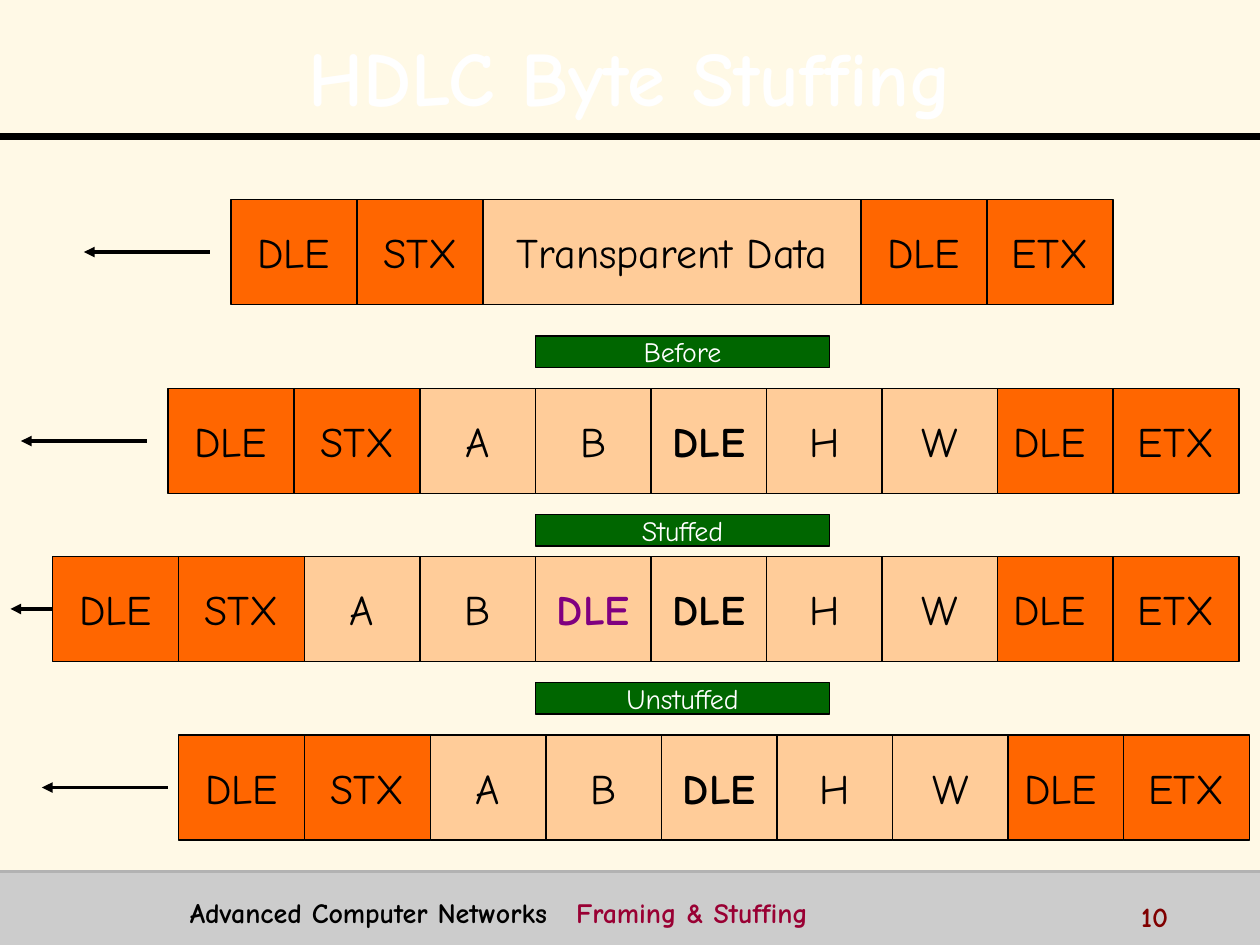
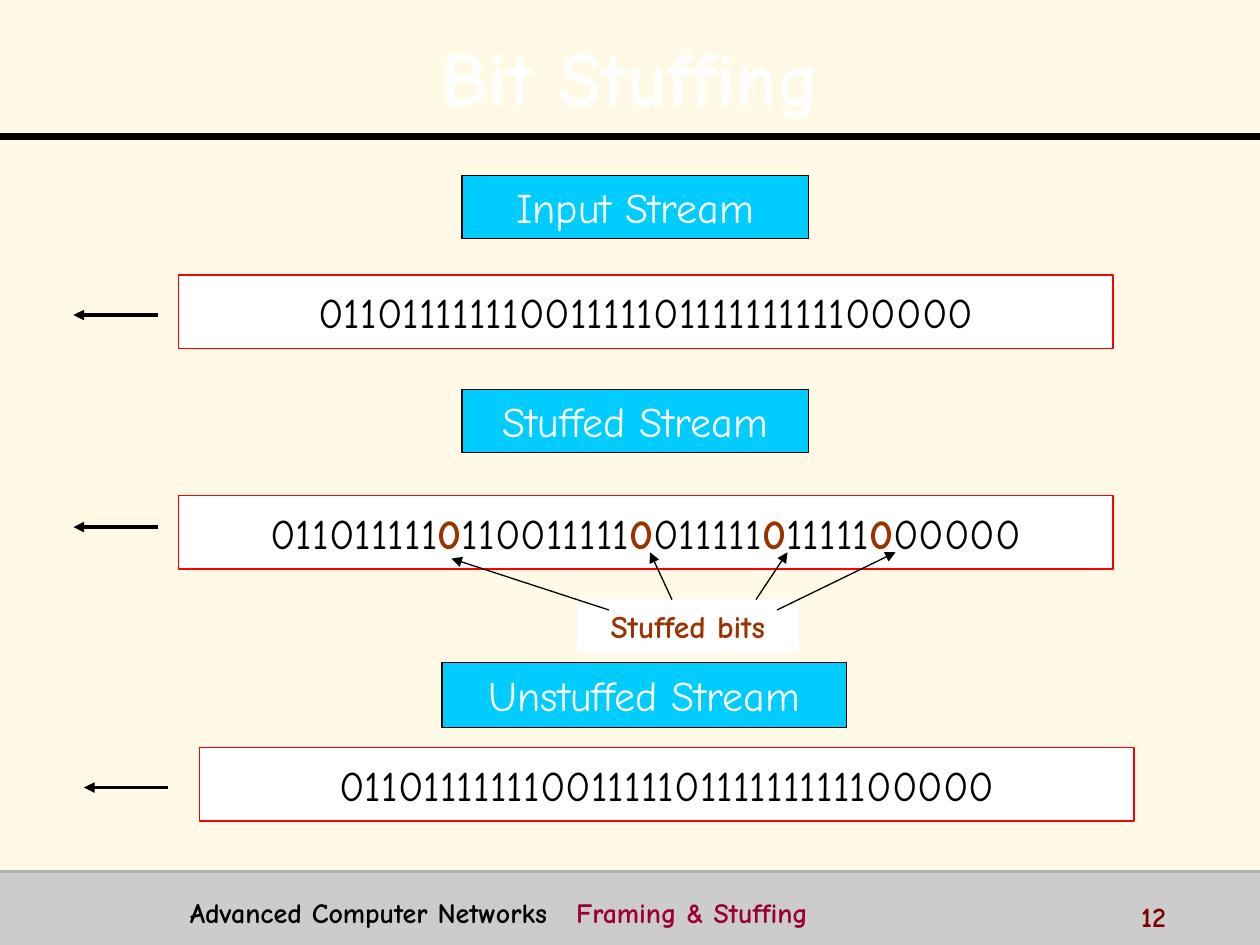
from pptx import Presentation
from pptx.dml.color import RGBColor
from pptx.enum.shapes import MSO_CONNECTOR as LINE, MSO_SHAPE as SHAPE
from pptx.enum.text import MSO_ANCHOR as ANCHOR, PP_ALIGN as ALIGN
from pptx.oxml.ns import qn
from pptx.util import Emu, Pt
from lxml.etree import SubElement

PX = 7620  # 120 px to the inch
PAGE_W, PAGE_H = 1200, 900
FONT = "Comic Neue"
COLORS = {
    "page": "FFF9E6", "black": "000000", "white": "FFFFFF",
    "band": "CCCCCC", "band_edge": "B2B2B2", "topic": "990033", "number": "800000",
    "control": "FF6600", "data": "FFCC99", "stage": "006600", "escape": "800080",
    "heading": "00CCFF", "stream_edge": "FF0000", "stuffed": "993300",
}

# Frame rows
CELL_H, CONTROL_W, CHAR_W = 100, 120, 110
STUFFED_BITS = "011011111|0|110011111|0|011111|0|11111|0|00000".split("|")


def px(length):
    return Emu(length * PX)


def color(name):
    return RGBColor.from_string(COLORS[name])


def add_span(para, text, size, ink="black", bold=False):
    span = para.add_run()
    span.text = text
    values = {"name": FONT, "size": Pt(size), "bold": bold}
    for key, value in values.items():
        setattr(span.font, key, value)
    span.font.color.rgb = color(ink)
    return span


def add_text(page, box):
    """Add a wrapping text box and return its text frame."""
    frame = page.shapes.add_textbox(*map(px, box)).text_frame
    frame.word_wrap = True
    return frame


def add_rect(page, box, fill, edge="black", spans=(), size=24):
    """Add a rectangle; spans holds (text, ink, bold) for its centred line."""
    rect = page.shapes.add_shape(SHAPE.RECTANGLE, *map(px, box))
    rect.shadow.inherit = False
    rect.fill.solid()
    rect.fill.fore_color.rgb = color(fill)
    if edge:
        rect.line.color.rgb = color(edge)
        rect.line.width = Pt(0.75)
    else:
        rect.line.fill.background()
    frame = rect.text_frame
    frame.word_wrap = False
    frame.vertical_anchor = ANCHOR.MIDDLE
    para = frame.paragraphs[0]
    para.alignment = ALIGN.CENTER
    for text, ink, bold in spans:
        add_span(para, text, size, ink, bold)
    return rect


def add_line(page, start, end, width, ink="black", arrow=False):
    line = page.shapes.add_connector(LINE.STRAIGHT, *map(px, (*start, *end)))
    line.line.color.rgb = color(ink)
    line.line.width = Pt(width)
    properties = line._element.spPr
    if arrow:
        SubElement(properties.find(qn("a:ln")), qn("a:tailEnd"), type="triangle")
    SubElement(properties, qn("a:effectLst"))
    return line


def add_title(page, box, text):
    frame = add_text(page, box)
    frame.vertical_anchor = ANCHOR.MIDDLE
    para = frame.paragraphs[0]
    para.alignment = ALIGN.CENTER
    para.line_spacing = 1.1
    span = add_span(para, text, 44, "white", True)
    # Hard black shadow behind the white letters
    effects = SubElement(span.font._element, qn("a:effectLst"))
    shadow = SubElement(effects, qn("a:outerShdw"), dist="35921", dir="2700000")
    SubElement(shadow, qn("a:srgbClr"), val=COLORS["black"])
    # Effects stand between the fill and the typeface
    span.font._element.find(qn("a:solidFill")).addnext(effects)


def add_footer(page, box, number):
    left, top, width, height = box
    add_rect(page, box, "band", edge=None)
    add_line(page, (left, top), (left + width, top), 2, "band_edge")
    para = add_text(page, (left + 169, top + 17, 874, 37)).paragraphs[0]
    tabs = SubElement(para._p.get_or_add_pPr(), qn("a:tabLst"))
    SubElement(tabs, qn("a:tab"), pos=str(px(368)), algn="l")
    add_span(para, "Advanced Computer Networks\t", 16, bold=True)
    add_span(para, "Framing & Stuffing", 16, "topic", True)
    para = add_text(page, (left + 1075, top + 21, 120, 30)).paragraphs[0]
    add_span(para, str(number), 16, "number", True)


def add_page(deck, title, number):
    page = deck.slides.add_slide(deck.slide_layouts[6])
    page.background.fill.solid()
    page.background.fill.fore_color.rgb = color("page")
    add_line(page, (0, 130), (PAGE_W, 130), 4)
    add_title(page, (24, 16, 1153, 104), title)
    add_footer(page, (0, 830, PAGE_W, 70), number)
    return page


def add_frame_row(page, left, top, data, data_w=CHAR_W, tuck=10, gap=20, reach=120):
    """Header, data and trailer cells; the data covers tuck px of the trailer."""
    data_left = left + 2 * CONTROL_W
    trailer_left = data_left + len(data) * data_w - tuck
    controls = []
    for start, labels in ((left, ("DLE", "STX")), (trailer_left, ("DLE", "ETX"))):
        for column, label in enumerate(labels):
            box = (start + column * CONTROL_W, top, CONTROL_W, CELL_H)
            controls.append(add_rect(page, box, "control", spans=[(label, "black", False)]))
    for column, span in enumerate(data):
        box = (data_left + column * data_w, top, data_w, CELL_H)
        add_rect(page, box, "data", spans=[span])
    # Sending direction
    start, middle = left - gap, top + CELL_H // 2
    arrow = add_line(page, (start, middle), (start - reach, middle), 2, arrow=True)
    if gap == 0:
        arrow.begin_connect(controls[0], 1)


def add_stream(page, box, spans, gap=20, drop=38):
    left, top = box[:2]
    add_rect(page, box, "white", "stream_edge", spans)
    start, level = left - gap, top + drop
    add_line(page, (start, level), (start - 80, level), 2, arrow=True)


def add_stuffed_note(page, box):
    """Label with arrows up to the stuffed bits, as offsets from its corner."""
    left, top = box[:2]
    add_rect(page, box, "white", "white", [("Stuffed bits", "stuffed", True)], 18)
    pointers = [(30, 10, -120, -39), (90, 0, 69, -45),
                (170, 0, 200, -45), (190, 10, 303, -45)]
    for x1, y1, x2, y2 in pointers:
        add_line(page, (left + x1, top + y1), (left + x2, top + y2), 0.75, arrow=True)


def build_byte_stuffing(deck):
    page = add_page(deck, "HDLC Byte Stuffing", 10)
    chars = [(char, "black", char == "DLE") for char in ("A", "B", "DLE", "H", "W")]
    stuffed = chars[:2] + [("DLE", "escape", True)] + chars[2:]
    add_frame_row(page, 220, 190, [("Transparent Data", "black", False)], 360, tuck=0)
    add_frame_row(page, 160, 370, chars)
    add_frame_row(page, 50, 530, stuffed, gap=0, reach=40)
    add_frame_row(page, 170, 700, chars, gap=10)
    for top, stage in ((320, "Before"), (490, "Stuffed"), (650, "Unstuffed")):
        add_rect(page, (510, top, 280, 30), "stage", spans=[(stage, "white", False)], size=16)


def build_bit_stuffing(deck):
    page = add_page(deck, "Bit Stuffing", 12)
    headings = [((440, 167, 330, 60), "Input Stream"),
                ((440, 371, 330, 60), "Stuffed Stream"),
                ((421, 631, 385, 62), "Unstuffed Stream")]
    for box, text in headings:
        add_rect(page, box, "heading", spans=[(text, "white", False)])
    # Every second part of the stuffed stream is an inserted bit
    plain = [("".join(STUFFED_BITS[::2]), "black", False)]
    stuffed = [(bits, "stuffed" if index % 2 else "black", index % 2 == 1)
               for index, bits in enumerate(STUFFED_BITS)]
    add_stream(page, (170, 262, 890, 70), plain)
    add_stream(page, (170, 472, 890, 70), stuffed, drop=30)
    add_stream(page, (190, 712, 890, 70), plain, gap=30)
    add_stuffed_note(page, (550, 571, 210, 50))


def main():
    deck = Presentation()
    deck.slide_width, deck.slide_height = px(PAGE_W), px(PAGE_H)
    build_byte_stuffing(deck)
    build_bit_stuffing(deck)
    deck.save("out.pptx")


if __name__ == "__main__":
    main()
